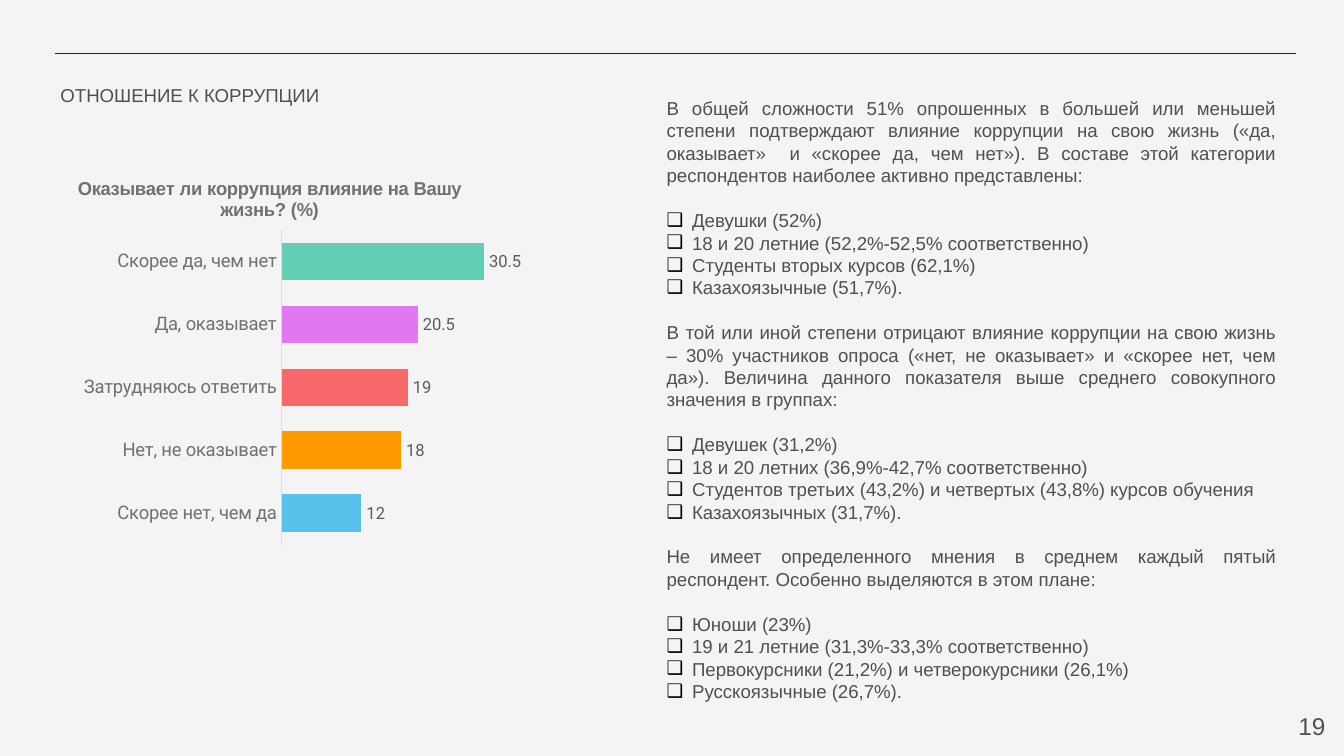
from lxml import etree
from pptx import Presentation
from pptx.chart import data
from pptx.dml.color import RGBColor
from pptx.enum import chart as ch, shapes, text
from pptx.oxml import parse_xml
from pptx.oxml.ns import nsdecls, qn
from pptx.util import Inches, Pt

BACKGROUND = RGBColor(0xF4, 0xF4, 0xF4)
RULE = RGBColor(0x24, 0x24, 0x24)
BODY = RGBColor(0x50, 0x50, 0x50)
GRAY = RGBColor(0x71, 0x71, 0x71)
LABEL = RGBColor(0x5B, 0x5B, 0x5B)
AXIS = RGBColor(0xDE, 0xDE, 0xDE)
BLUE = RGBColor(0x57, 0xC2, 0xEC)
ORANGE = RGBColor(0xFF, 0x99, 0x00)
RED = RGBColor(0xF7, 0x68, 0x6B)
VIOLET = RGBColor(0xE0, 0x78, 0xF1)
GREEN = RGBColor(0x62, 0xCF, 0xB5)

ANSWERS = [
    ("Скорее нет, чем да", 12, BLUE),
    ("Нет, не оказывает", 18, ORANGE),
    ("Затрудняюсь ответить", 19, RED),
    ("Да, оказывает", 20.5, VIOLET),
    ("Скорее да, чем нет", 30.5, GREEN),
]

FINDINGS = [
    ("В общей сложности 51% опрошенных в большей или меньшей степени "
     "подтверждают влияние коррупции на свою жизнь («да, оказывает»  и "
     "«скорее да, чем нет»). В составе этой категории респондентов "
     "наиболее активно представлены:",
     ["Девушки (52%)",
      "18 и 20 летние (52,2%-52,5% соответственно)",
      "Студенты вторых курсов (62,1%)",
      "Казахоязычные (51,7%)."]),
    ("В той или иной степени отрицают влияние коррупции на свою жизнь – "
     "30% участников опроса («нет, не оказывает» и «скорее нет, чем да»). "
     "Величина данного показателя выше среднего совокупного значения в "
     "группах:",
     ["Девушек (31,2%)",
      "18 и 20 летних (36,9%-42,7% соответственно)",
      "Студентов третьих (43,2%) и четвертых (43,8%) курсов обучения",
      "Казахоязычных (31,7%)."]),
    ("Не имеет определенного мнения в среднем каждый пятый респондент. "
     "Особенно выделяются в этом плане:",
     ["Юноши (23%)",
      "19 и 21 летние (31,3%-33,3% соответственно)",
      "Первокурсники (21,2%) и четверокурсники (26,1%)",
      "Русскоязычные (26,7%)."]),
]


def set_font(font, size, color, name="Arial", bold=False):
    font.size, font.name, font.bold = Pt(size), name, bold
    font.color.rgb = color


def write(p, content, size=10, color=BODY, align=text.PP_ALIGN.LEFT, before=0):
    p.alignment, p.line_spacing = align, 1.0
    p.space_before, p.space_after = Pt(before), Pt(0)
    r = p.add_run()
    r.text = content
    set_font(r.font, size, color)


def set_bullet(p, char=None, indent=0):
    pPr = p._p.get_or_add_pPr()
    pPr.set("marL", str(Inches(indent)))
    pPr.set("indent", str(-Inches(indent)))
    if char:
        color = etree.SubElement(pPr, qn("a:buClr"))
        etree.SubElement(color, qn("a:srgbClr"), val="000000")
        etree.SubElement(pPr, qn("a:buFont"), typeface="Arial")
        etree.SubElement(pPr, qn("a:buChar"), char=char)
    else:
        etree.SubElement(pPr, qn("a:buNone"))


def place(sp, box):
    sp.left, sp.top, sp.width, sp.height = map(Inches, box)
    tf = sp.text_frame
    tf.word_wrap, tf.auto_size = True, text.MSO_AUTO_SIZE.NONE
    tf.vertical_anchor = text.MSO_ANCHOR.TOP
    tf.margin_left = tf.margin_right = Inches(0.1)
    tf.margin_top = tf.margin_bottom = Inches(0.1)
    return tf


def set_layout(element, **fractions):
    """Give a chart title or plot area a manual layout."""
    for old in element.findall(qn("c:layout")):
        element.remove(old)
    layout = parse_xml(f"<c:layout {nsdecls('c')}><c:manualLayout/></c:layout>")
    for tag, value in fractions.items():
        etree.SubElement(layout[0], qn(f"c:{tag}"), val=str(value))
    tx = element.find(qn("c:tx"))
    element.insert(0 if tx is None else 1, layout)


def add_rule(slide, x1, x2, y):
    line = slide.shapes.add_connector(
        shapes.MSO_CONNECTOR.STRAIGHT,
        Inches(x1), Inches(y), Inches(x2), Inches(y))
    line.line.color.rgb, line.line.width = RULE, Pt(0.75)
    etree.SubElement(line._element.spPr, qn("a:effectLst"))


def add_heading(slide, box):
    tf = place(slide.shapes.title, box)
    tf.margin_left = Inches(0.14)
    write(tf.paragraphs[0], "ОТНОШЕНИЕ К КОРРУПЦИИ")


def add_findings(slide, box):
    tf = place(slide.placeholders[1], box)
    p = tf.paragraphs[0]
    justify = text.PP_ALIGN.JUSTIFY
    for i, (statement, groups) in enumerate(FINDINGS):
        if i:
            p = tf.add_paragraph()
        write(p, statement, before=12 if i else 0, align=justify)
        set_bullet(p)
        for j, group in enumerate(groups):
            p = tf.add_paragraph()
            write(p, group, before=0 if j else 12, align=justify)
            set_bullet(p, "❑", 0.19)


def add_answers_chart(slide, box):
    names, values, colors = zip(*ANSWERS)
    chart_data = data.CategoryChartData()
    chart_data.categories = names
    chart_data.add_series("Series 1", values)
    chart = slide.shapes.add_chart(
        ch.XL_CHART_TYPE.BAR_CLUSTERED, *map(Inches, box), chart_data).chart
    set_font(chart.font, 10, RULE)
    chart.has_legend = False

    # Title
    chart.has_title = True
    p = chart.chart_title.text_frame.paragraphs[0]
    r = p.add_run()
    r.text = "Оказывает ли коррупция влияние на Вашу жизнь? (%)"
    set_font(r.font, 10, GRAY, bold=True)
    set_layout(chart.chart_title._element,
               xMode="edge", yMode="edge", x=0.11, y=0.03)

    # Axes
    axis = chart.category_axis
    axis.major_tick_mark = axis.minor_tick_mark = ch.XL_TICK_MARK.NONE
    axis.format.line.color.rgb, axis.format.line.width = AXIS, Pt(0.75)
    set_font(axis.tick_labels.font, 10, GRAY, "Roboto")
    value_axis = chart.value_axis
    value_axis.visible = value_axis.has_major_gridlines = False
    value_axis.minimum_scale, value_axis.maximum_scale = 0, 35

    # Bars and their labels
    plot = chart.plots[0]
    plot.gap_width, plot.vary_by_categories = 66, False
    series = plot.series[0]
    series.format.fill.solid()
    series.format.fill.fore_color.rgb = GREEN
    for i, color in enumerate(colors):
        fill = series.points[i].format.fill
        fill.solid()
        fill.fore_color.rgb = color
    labels = series.data_labels
    labels.show_value = True
    labels.position = ch.XL_LABEL_POSITION.OUTSIDE_END
    set_font(labels.font, 9, LABEL, "Roboto")
    set_layout(chart._chartSpace.chart.plotArea, layoutTarget="inner",
               xMode="edge", yMode="edge", x=0.53, y=0.15, w=0.47, h=0.66)


def add_page_number(slide, box):
    tf = place(slide.shapes.add_textbox(0, 0, 0, 0), box)
    write(tf.paragraphs[0], "19", size=13, align=text.PP_ALIGN.RIGHT)


def main():
    prs = Presentation()
    prs.slide_width = Inches(10)
    prs.slide_height = prs.slide_width * 9 // 16
    slide = prs.slides.add_slide(prs.slide_layouts[1])
    slide.background.fill.solid()
    slide.background.fill.fore_color.rgb = BACKGROUND
    add_rule(slide, 0.41, 9.64, 0.4)
    add_page_number(slide, (9.36, 5.19, 0.6, 0.43))
    add_findings(slide, (4.86, 0.62, 4.73, 4.79))
    add_heading(slide, (0.31, 0.52, 4.2, 0.37))
    add_answers_chart(slide, (0.15, 1.18, 3.73, 3.55))
    prs.save("out.pptx")


if __name__ == "__main__":
    main()
